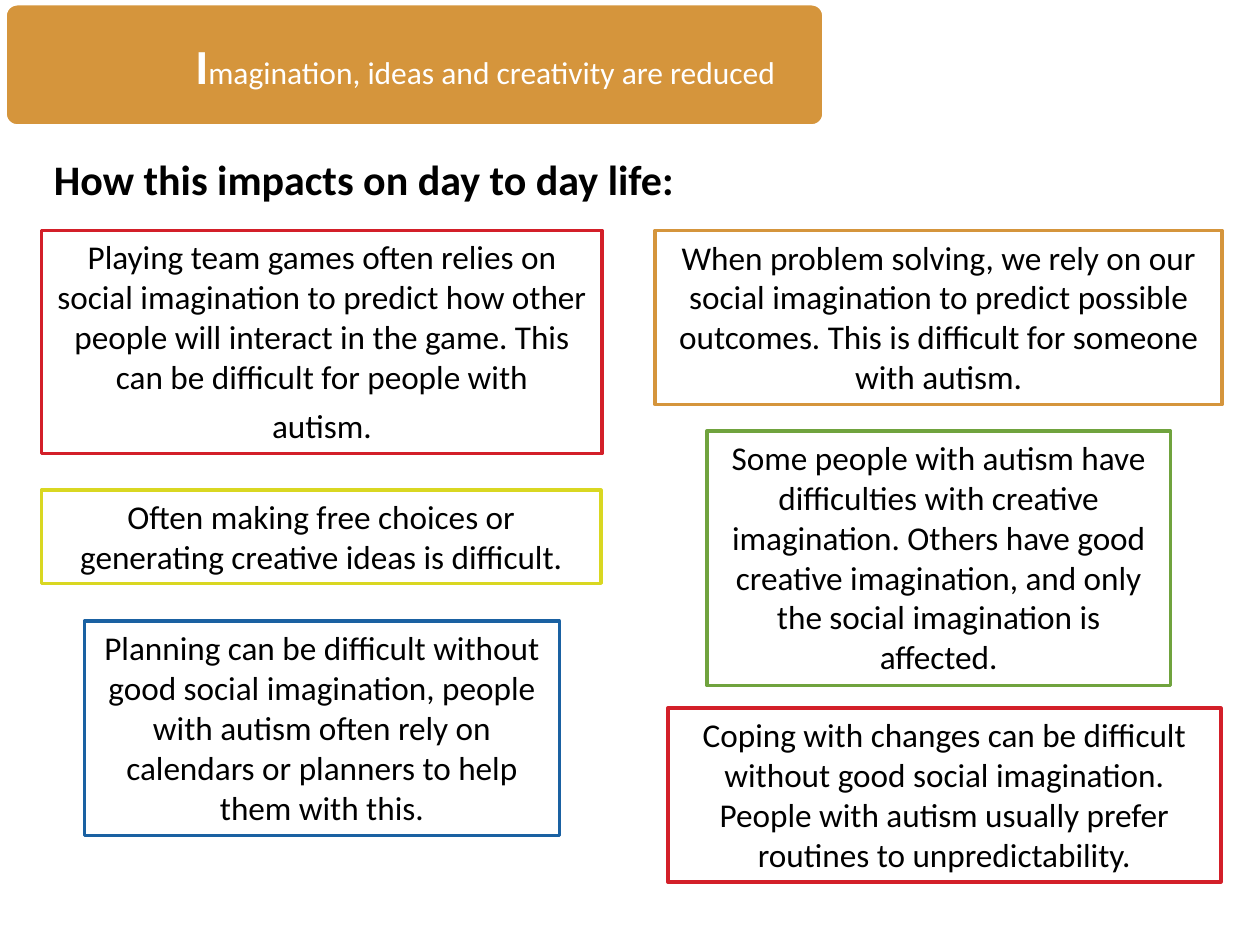
from pptx import Presentation
from pptx.dml.color import RGBColor
from pptx.enum.shapes import MSO_SHAPE
from pptx.enum.text import MSO_ANCHOR, MSO_AUTO_SIZE, PP_ALIGN
from pptx.util import Inches, Pt

RECT, ROUNDED = MSO_SHAPE.RECTANGLE, MSO_SHAPE.ROUNDED_RECTANGLE
TOP, MIDDLE = MSO_ANCHOR.TOP, MSO_ANCHOR.MIDDLE
LEFT, CENTER = PP_ALIGN.LEFT, PP_ALIGN.CENTER
NO_FIT, GROW = MSO_AUTO_SIZE.NONE, MSO_AUTO_SIZE.SHAPE_TO_FIT_TEXT

FONT = "Calibri"
BLACK, WHITE = "000000", "FFFFFF"
RED, ORANGE, GREEN, BLUE, YELLOW = "D31F29", "D5953C", "70A33E", "1A61A2", "D9D721"

TITLE = [("I", 28, True), ("magination, ideas and creativity are reduced", 18, False)]
HEADING = "How this impacts on day to day life:"
IMPACTS = [
    (0.33, 1.83, 4.45, 1.77, RED, [
        "Playing team games often relies on social imagination to predict how other "
        "people will interact in the game. This can be difficult for people with",
        "autism."]),
    (0.33, 3.89, 4.44, 0.74, YELLOW, [
        "Often making free choices or generating creative ideas is difficult."]),
    (0.67, 4.93, 3.77, 1.7, BLUE, [
        "Planning can be difficult without good social imagination, people with autism "
        "often rely on calendars or planners to help them with this."]),
    (5.2, 1.83, 4.5, 1.38, ORANGE, [
        "When problem solving, we rely on our social imagination to predict possible "
        "outcomes. This is difficult for someone with autism."]),
    (5.61, 3.42, 3.68, 2.02, GREEN, [
        "Some people with autism have difficulties with creative imagination. Others have "
        "good creative imagination, and only the social imagination is affected."]),
    (5.3, 5.62, 4.39, 1.38, RED, [
        "Coping with changes can be difficult without good social imagination. People "
        "with autism usually prefer routines to unpredictability."]),
]


def rgb(value):
    return RGBColor.from_string(value)


def add_run(p, text, size, color, bold=False):
    r = p.add_run()
    r.text = text
    r.font.name = FONT
    r.font.size = Pt(size)
    r.font.bold = bold
    r.font.color.rgb = rgb(color)


def add_box(s, kind, left, top, width, height, fill, line):
    sp = s.shapes.add_shape(kind, Inches(left), Inches(top), Inches(width), Inches(height))
    sp.shadow.inherit = False
    sp.fill.solid()
    sp.fill.fore_color.rgb = rgb(fill)
    sp.line.color.rgb = rgb(line)
    sp.line.width = Pt(2)
    return sp


def add_title(s):
    banner = add_box(s, ROUNDED, 0.04, 0.03, 6.5, 0.97, ORANGE, WHITE)
    banner.adjustments[0] = 0.1
    title = s.shapes.title
    title.left, title.top = Inches(1.43), Inches(0.03)
    title.width, title.height = Inches(5.1), Inches(0.97)
    tf = title.text_frame
    tf.auto_size = NO_FIT
    tf.word_wrap = True
    tf.vertical_anchor = MIDDLE
    tf.margin_left = tf.margin_right = tf.margin_top = tf.margin_bottom = Inches(0.12)
    p = tf.paragraphs[0]
    p.alignment = LEFT
    for text, size, bold in TITLE:
        add_run(p, text, size, WHITE, bold)
    title.element.getparent().append(title.element)


def add_heading(s):
    sp = s.shapes.add_textbox(Inches(0.33), Inches(1.17), Inches(5.17), Inches(0.5))
    tf = sp.text_frame
    tf.word_wrap = False
    tf.auto_size = GROW
    add_run(tf.paragraphs[0], HEADING, 24, BLACK, True)


def add_impact(s, left, top, width, height, color, paragraphs):
    tf = add_box(s, RECT, left, top, width, height, WHITE, color).text_frame
    tf.word_wrap = True
    tf.auto_size = GROW
    tf.vertical_anchor = TOP
    for i, text in enumerate(paragraphs):
        p = tf.add_paragraph() if i else tf.paragraphs[0]
        p.alignment = CENTER
        p.space_before = Pt(5 if i else 0)
        add_run(p, text, 19, BLACK)


def main():
    prs = Presentation()
    prs.slide_width, prs.slide_height = Inches(10), Inches(7.5)
    s = prs.slides.add_slide(prs.slide_layouts[5])
    add_heading(s)
    for impact in IMPACTS:
        add_impact(s, *impact)
    add_title(s)
    prs.save("out.pptx")


if __name__ == "__main__":
    main()
